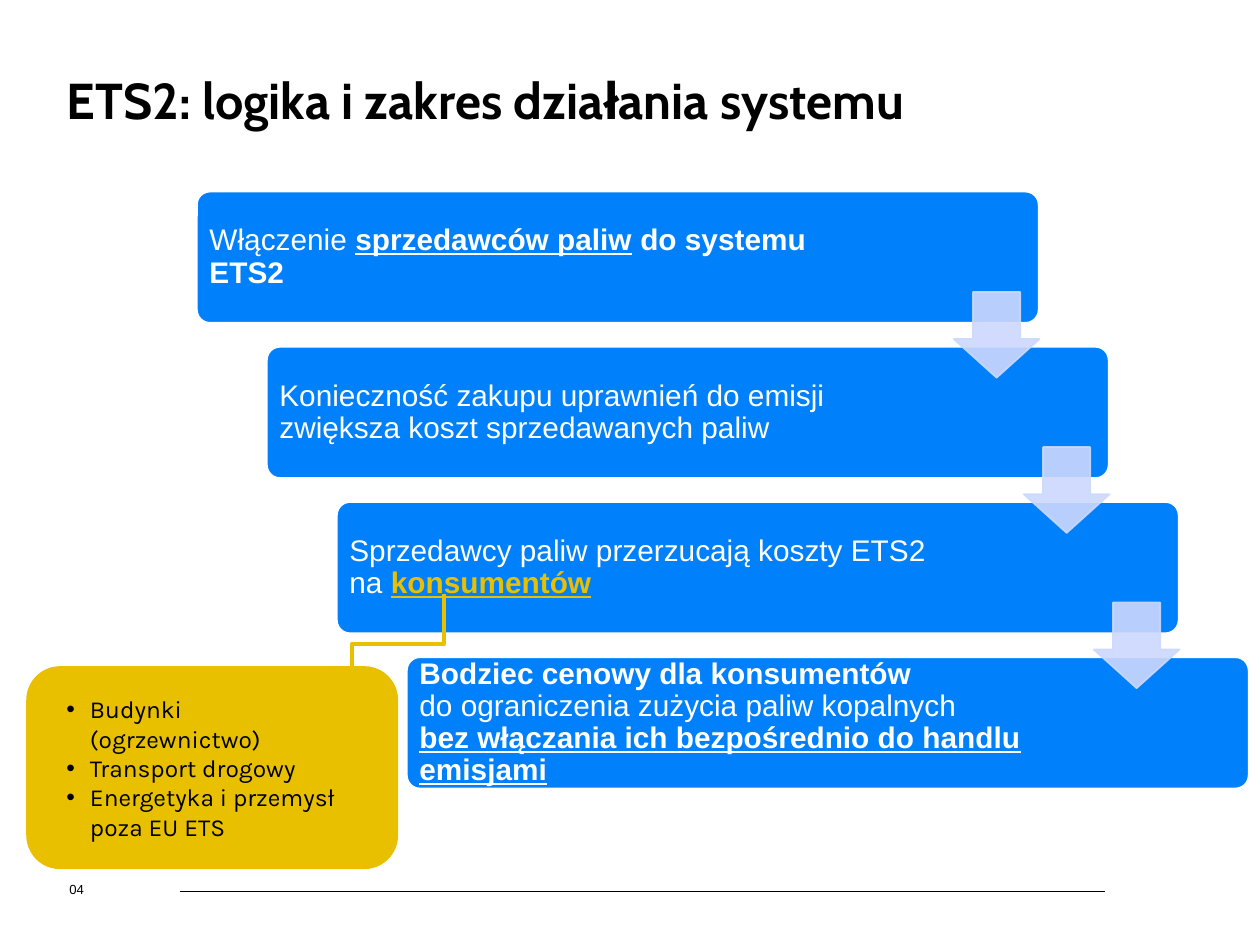
from lxml.etree import SubElement
from pptx import Presentation
from pptx.dml.color import RGBColor
from pptx.enum.shapes import MSO_CONNECTOR, MSO_SHAPE
from pptx.enum.text import MSO_ANCHOR, PP_ALIGN
from pptx.oxml.ns import qn
from pptx.util import Pt

BLACK = RGBColor(0x00, 0x00, 0x00)
WHITE = RGBColor(0xFF, 0xFF, 0xFF)
BLUE = RGBColor(0x00, 0x81, 0xFB)
PALE = RGBColor(0xCC, 0xD8, 0xFE)
GOLD = RGBColor(0xE8, 0xC0, 0x00)

PLAIN = {}
BOLD = {"bold": True}
STRONG = {"bold": True, "underline": True}
GOLDEN = {"bold": True, "underline": True, "color": GOLD}


class SlideBuilder:
    body_font = "Arial"

    def __init__(self, slide):
        self.slide = slide

    def style(self, run, size, name=body_font, color=BLACK, bold=False, underline=False):
        font = run.font
        font.size, font.name = Pt(size), name
        font.bold, font.underline = bold, underline
        font.color.rgb = color

    def frame(self, shape, anchor, inset_x, inset_y):
        frame = shape.text_frame
        frame.word_wrap = True
        frame.vertical_anchor = anchor
        frame.margin_left = frame.margin_right = Pt(inset_x)
        frame.margin_top = frame.margin_bottom = Pt(inset_y)
        return frame

    def text(self, box, lines, size, anchor=MSO_ANCHOR.MIDDLE, inset=0, **look):
        """Each line is a list of (wording, emphasis) pairs."""
        shape = self.slide.shapes.add_textbox(*map(Pt, box))
        paragraph = self.frame(shape, anchor, inset, inset).paragraphs[0]
        paragraph.line_spacing = 0.9
        for number, line in enumerate(lines):
            if number:
                paragraph.add_line_break()
            for wording, emphasis in line:
                run = paragraph.add_run()
                run.text = wording
                self.style(run, size, **{**look, **emphasis})

    def block(self, kind, box, fill, outline=None, adjustments=(), opacity=None):
        shape = self.slide.shapes.add_shape(kind, *map(Pt, box))
        shape.shadow.inherit = False
        shape.fill.solid()
        shape.fill.fore_color.rgb = fill
        for index, value in enumerate(adjustments):
            shape.adjustments[index] = value
        if outline is None:
            shape.line.fill.background()
        else:
            shape.line.color.rgb = outline
            shape.line.width = Pt(1)
        if opacity:
            for color in shape.element.spPr.iter(qn("a:srgbClr")):
                SubElement(color, qn("a:alpha"), val=str(opacity * 1000))
        return shape

    def bullets(self, shape, items, size, font, indent):
        frame = self.frame(shape, MSO_ANCHOR.MIDDLE, 17.3, 3.6)
        frame.text = "\n".join(items)
        for paragraph in frame.paragraphs:
            paragraph.alignment = PP_ALIGN.LEFT
            properties = paragraph._p.get_or_add_pPr()
            properties.set("marL", str(Pt(indent)))
            properties.set("indent", str(-Pt(indent)))
            SubElement(properties, qn("a:buFont"), typeface="Arial")
            SubElement(properties, qn("a:buChar"), char="•")
            self.style(paragraph.runs[0], size, font)

    def connector(self, kind, ends, color, width):
        line = self.slide.shapes.add_connector(kind, *map(Pt, ends))
        line.line.color.rgb = color
        line.line.width = Pt(width)
        SubElement(line.element.spPr, qn("a:effectLst"))
        return line

    def elbow(self, start_x, start_y, end_x, end_y, bend, color, width):
        """Runs down, across to the left and down again."""
        middle_x, middle_y = (start_x + end_x) / 2, (start_y + end_y) / 2
        half_run, half_drop = abs(end_x - start_x) / 2, (end_y - start_y) / 2
        ends = (middle_x - half_drop, middle_y - half_run,
                middle_x + half_drop, middle_y + half_run)
        line = self.connector(MSO_CONNECTOR.ELBOW, ends, color, width)
        properties = line.element.spPr
        properties.find(qn("a:xfrm")).set("rot", str(90 * 60000))
        guides = properties.find(qn("a:prstGeom")).get_or_add_avLst()
        SubElement(guides, qn("a:gd"), name="adj1", fmla=f"val {round(bend * 100000)}")


# Staircase of steps: text width and lines of each
STEPS = [
    (394, [[("Włączenie ", PLAIN), ("sprzedawców paliw", STRONG), (" do systemu ETS2", BOLD)]]),
    (388, [[("Konieczność zakupu uprawnień do emisji zwiększa koszt sprzedawanych paliw", PLAIN)]]),
    (388, [[("Sprzedawcy paliw przerzucają koszty ETS2 ", PLAIN)],
           [("na ", PLAIN), ("konsumentów", GOLDEN)]]),
    (388, [[("Bodziec cenowy dla konsumentów ", BOLD)],
           [("do ograniczenia zużycia paliw kopalnych ", PLAIN)],
           [("bez włączania ich bezpośrednio do handlu emisjami", STRONG)]]),
]
LEFT, TOP, WIDTH, HEIGHT = 112.5, 109.5, 481, 75
SHIFT_X, SHIFT_Y = 40, 88.7
SECTORS = ["Budynki (ogrzewnictwo)", "Transport drogowy", "Energetyka i przemysł poza EU ETS"]


def main():
    presentation = Presentation()
    presentation.slide_width, presentation.slide_height = Pt(720), Pt(540)
    builder = SlideBuilder(presentation.slides.add_slide(presentation.slide_layouts[6]))

    # Footer rule, title and page number
    builder.connector(MSO_CONNECTOR.STRAIGHT, (103, 509, 631.5, 509), BLACK, 0.25)
    builder.text((38.2, 43.2, 610, 33), [[("ETS2: logika i zakres działania systemu", BOLD)]],
                 28.8, MSO_ANCHOR.TOP, name="Cabin")
    builder.text((39.6, 504.7, 90, 8), [[("04", PLAIN)]], 7.5)

    # Steps
    for index, (text_width, lines) in enumerate(STEPS):
        x, y = LEFT + index * SHIFT_X, TOP + index * SHIFT_Y
        builder.block(MSO_SHAPE.ROUNDED_RECTANGLE, (x, y, WIDTH, HEIGHT), BLUE, WHITE, [0.1])
        builder.text((x + 2.2, y + 2.2, text_width, HEIGHT - 4.4), lines, 17,
                     inset=5, color=WHITE)

    # Arrows between the steps
    for index in range(len(STEPS) - 1):
        box = (545 + index * SHIFT_X, 166.8 + index * SHIFT_Y, 49, 49)
        builder.block(MSO_SHAPE.DOWN_ARROW, box, PALE, PALE, [0.55, 0.45], opacity=90)

    # Consumer sectors
    sectors = builder.block(MSO_SHAPE.ROUNDED_RECTANGLE, (15, 380.7, 212.5, 116), GOLD)
    builder.bullets(sectors, SECTORS, 14, "Karla", 13.5)
    builder.elbow(253.6, 339.7, 201, 401.6, 0.457, GOLD, 2.25)

    presentation.save("out.pptx")


if __name__ == "__main__":
    main()
